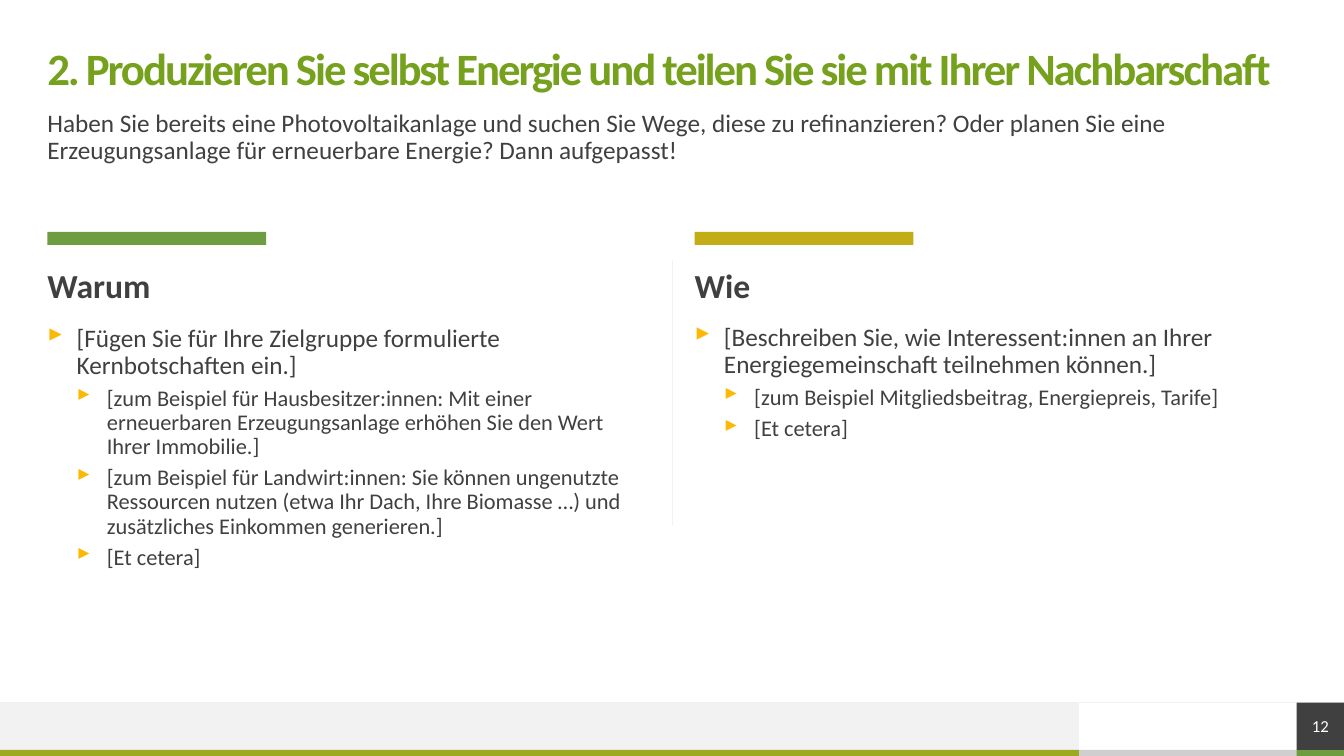
from lxml import etree
from pptx import Presentation
from pptx import util as u
from pptx.dml.color import RGBColor
from pptx.enum import shapes, text
from pptx.oxml import ns

HUES = {
    "title": "75A11D", "ink": "404040", "green": "6D9D40", "gold": "C3AD16",
    "lime": "9CAA20", "pale": "F2F2F2", "gray": "D0CECE", "mark": "FBB804",
    "white": "FFFFFF",
}
FONT = "Calibri"
EDGE = 0.47
FULL = 12.4
SPLIT = 10.7
FOOT = 6.97
BASE = 7.44
LEVELS = [(0.29, -0.29, 10, 18), (0.59, -0.3, 5, 16)]
COLUMNS = [
    (EDGE, "green", "Warum", 3.23, [
        (0, "[Fügen Sie für Ihre Zielgruppe formulierte Kernbotschaften ein.]"),
        (1, "[zum Beispiel für Hausbesitzer:innen: Mit einer erneuerbaren "
            "Erzeugungsanlage erhöhen Sie den Wert Ihrer Immobilie.]"),
        (1, "[zum Beispiel für Landwirt:innen: Sie können ungenutzte Ressourcen "
            "nutzen (etwa Ihr Dach, Ihre Biomasse …) und zusätzliches "
            "Einkommen generieren.]"),
        (1, "[Et cetera]"),
    ]),
    (6.89, "gold", "Wie", 3.22, [
        (0, "[Beschreiben Sie, wie Interessent:innen an Ihrer "
            "Energiegemeinschaft teilnehmen können.]"),
        (1, "[zum Beispiel Mitgliedsbeitrag, Energiepreis, Tarife]"),
        (1, "[Et cetera]"),
    ]),
]


def color(name):
    """Return the named colour."""
    return RGBColor.from_string(HUES[name])


def write(para, words, size, hue="ink", bold=False):
    """Fill a paragraph with one formatted run and return the run."""
    para.text = words
    run = para.runs[0]
    font = run.font
    font.name, font.size, font.bold = FONT, u.Pt(size), bold
    font.color.rgb = color(hue)
    return run


def prepare(frame, anchor=text.MSO_ANCHOR.TOP):
    """Give a text frame wrapping, an anchor and no margins."""
    frame.word_wrap = True
    frame.vertical_anchor = anchor
    frame.margin_left = frame.margin_right = 0
    frame.margin_top = frame.margin_bottom = 0


def add_box(slide, place, anchor=text.MSO_ANCHOR.TOP):
    """Add an empty text box and return its frame."""
    frame = slide.shapes.add_textbox(*map(u.Inches, place)).text_frame
    prepare(frame, anchor)
    return frame


def add_text(slide, place, words, size, hue="ink", bold=False,
             anchor=text.MSO_ANCHOR.TOP):
    """Add a text box of one paragraph and return its run."""
    para = add_box(slide, place, anchor).paragraphs[0]
    para.line_spacing = 0.9
    return write(para, words, size, hue, bold)


def add_bar(slide, place, hue):
    """Add a plain filled rectangle."""
    bar = slide.shapes.add_shape(
        shapes.MSO_SHAPE.RECTANGLE, *map(u.Inches, place))
    bar.shadow.inherit = False
    bar.fill.solid()
    bar.fill.fore_color.rgb = color(hue)
    bar.line.fill.background()
    return bar


def add_rule(slide, *ends):
    """Add a thin pale line."""
    rule = slide.shapes.add_connector(
        shapes.MSO_CONNECTOR.STRAIGHT, *map(u.Inches, ends))
    rule.line.color.rgb = color("pale")
    rule.line.width = u.Pt(0.5)
    etree.SubElement(rule._element.spPr, ns.qn("a:effectLst"))


def add_mark(para, left, indent):
    """Set a hanging indent with a coloured bullet."""
    props = para._p.get_or_add_pPr()
    props.set("marL", str(u.Inches(left)))
    props.set("indent", str(u.Inches(indent)))
    tint = etree.SubElement(props, ns.qn("a:buClr"))
    etree.SubElement(tint, ns.qn("a:srgbClr"), val=HUES["mark"])
    etree.SubElement(props, ns.qn("a:buChar"), char="▸")


def add_list(slide, place, items):
    """Add a bulleted list of two levels."""
    frame = add_box(slide, place)
    for index, (level, words) in enumerate(items):
        para = frame.add_paragraph() if index else frame.paragraphs[0]
        left, indent, gap, size = LEVELS[level]
        add_mark(para, left, indent)
        para.level = level
        para.line_spacing = 0.9
        if index:
            para.space_before = u.Pt(gap)
        write(para, words, size)


def add_column(slide, left, hue, head, top, items):
    """Add a column with its accent bar, heading and list."""
    add_bar(slide, (left, 2.3, 2.17, 0.13), hue)
    add_text(slide, (left, 2.67, 5.98, 0.39), head, 24, bold=True)
    add_list(slide, (left, top, 5.98, 2.4), items)


def add_footer(slide):
    """Add the footer bands and the page number."""
    add_bar(slide, (SPLIT, BASE, 2.17, 0.06), "gray")
    add_bar(slide, (0, FOOT, SPLIT, 0.47), "pale")
    add_bar(slide, (0, BASE, SPLIT, 0.06), "lime")
    add_bar(slide, (12.86, BASE, 0.47, 0.06), "green")
    add_rule(slide, 13.33, FOOT, 0, FOOT)
    page = add_bar(slide, (12.86, FOOT, 0.47, 0.47), "ink").text_frame
    prepare(page, text.MSO_ANCHOR.MIDDLE)
    write(page.paragraphs[0], "12", 12, "white")
    page.paragraphs[0].alignment = text.PP_ALIGN.CENTER


def main():
    """Build the slide and save it."""
    deck = Presentation()
    deck.slide_width, deck.slide_height = u.Inches(13.33), u.Inches(7.5)
    slide = deck.slides.add_slide(deck.slide_layouts[6])
    add_footer(slide)
    title = add_text(
        slide, (EDGE, 0.47, FULL, 0.47),
        "2. Produzieren Sie selbst Energie und teilen Sie sie mit Ihrer "
        "Nachbarschaft", 32, "title", True, text.MSO_ANCHOR.MIDDLE)
    title._r.get_or_add_rPr().set("spc", "-150")
    add_text(
        slide, (EDGE, 1.1, FULL, 0.39),
        "Haben Sie bereits eine Photovoltaikanlage und suchen Sie Wege, diese "
        "zu refinanzieren? Oder planen Sie eine Erzeugungsanlage für "
        "erneuerbare Energie? Dann aufgepasst!", 18)
    for column in COLUMNS:
        add_column(slide, *column)
    add_rule(slide, 6.67, 2.58, 6.67, 5.22)
    deck.save("out.pptx")


if __name__ == "__main__":
    main()
